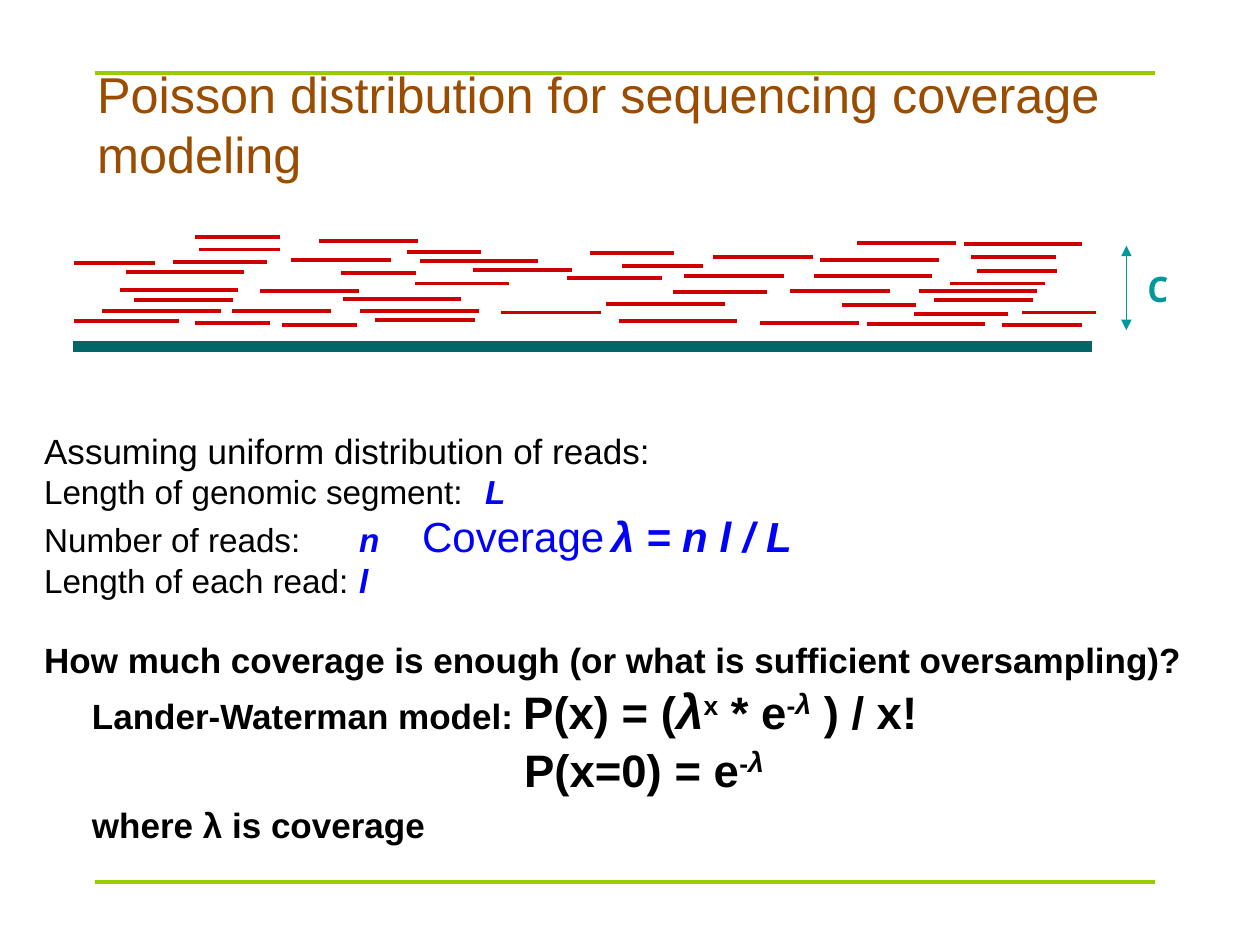
from pptx import Presentation
from pptx.dml.color import RGBColor
from pptx.enum.shapes import MSO_CONNECTOR
from pptx.enum.text import MSO_ANCHOR, MSO_AUTO_SIZE, PP_ALIGN
from pptx.oxml.ns import qn
from pptx.util import Inches, Pt
from lxml.etree import SubElement

COLORS = {"rule": "99CC00", "title": "9A4D00", "text": "000000", "symbol": "0000FF",
          "genome": "006666", "read": "CC0000", "depth": "009999"}

TITLE = "Poisson distribution for sequencing coverage modeling"

# Reads, grouped by length: (left, height on the slide)
READS = {
    0.59: [(1.55, 2.56), (2.24, 2.58), (6.68, 2.42), (2.71, 2.17), (3.23, 2), (8.11, 2.48)],
    0.64: [(1.58, 1.98), (7.95, 2.58), (4.94, 2.11), (7.75, 2.15), (0.59, 2.09)],
    0.67: [(1.55, 1.88), (4.68, 2.01), (7.71, 2.04)],
    0.75: [(1.37, 2.08), (3.29, 2.25), (5.34, 2.32), (7.25, 2.49), (4.5, 2.21), (7.54, 2.25)],
    0.79: [(1.06, 2.38), (1.84, 2.47), (2.06, 2.31), (2.98, 2.54), (3.98, 2.48),
           (2.31, 2.06), (2.53, 1.91), (3.75, 2.14), (6.03, 2.56), (6.27, 2.31),
           (7.41, 2.38), (5.43, 2.19), (5.66, 2.04), (6.8, 1.93)],
    0.83: [(0.59, 2.55)],
    0.94: [(0.95, 2.3), (1, 2.16), (0.81, 2.47), (2.86, 2.47), (2.72, 2.37), (3.33, 2.07),
           (4.91, 2.55), (4.81, 2.41), (6.88, 2.57), (7.29, 2.31), (6.46, 2.19),
           (6.51, 2.06), (7.65, 1.94)],
}

# Run styles
PLAIN = {"size": 19}
LEAD = {"size": 20}
SYMBOL = {"size": 19, "color": "symbol", "bold": True, "italic": True}
COVERAGE = {"size": 24, "color": "symbol"}
RATIO = {**SYMBOL, "size": 24}
STRONG = {"size": 20, "bold": True}
FORMULA = {"size": 26, "bold": True}
POWER = {**FORMULA, "raised": True}
LAMBDA = {"size": 28, "bold": True, "italic": True}
LAMBDA_POWER = {**LAMBDA, "raised": True}

# Body paragraphs: left indent, tab stops, extra space before, runs
BODY = [
    (0, [], 0, [("Assuming uniform distribution of reads:", LEAD)]),
    (0, [3.47], 0, [("Length of genomic segment:\t", PLAIN), ("L", SYMBOL)]),
    (0, [3.5, 4.32, 6.36], 0, [("Number of reads:\t", PLAIN), ("n\t", SYMBOL),
                               ("Coverage\t", COVERAGE), ("λ = n l / L", RATIO)]),
    (0, [3.52], 0, [("Length of each read:\t", PLAIN), ("l", SYMBOL)]),
    (0, [], 22, [("How much coverage is enough (or what is sufficient oversampling)?", STRONG)]),
    (0.38, [], 0, [("Lander-Waterman model: ", STRONG), ("P(x) = (", FORMULA), ("λ", LAMBDA),
                   ("x", POWER), (" * e", FORMULA), ("-", POWER), ("λ", LAMBDA_POWER),
                   (" ) / x!", FORMULA)]),
    (3.81, [], 0, [("P(x=0) = e", FORMULA), ("-", POWER), ("λ", LAMBDA_POWER)]),
    (0.38, [], 4, [("where λ is coverage", STRONG)]),
]


def place(shape, left, top, width, height):
    box = {"left": left, "top": top, "width": width, "height": height}
    for name, value in box.items():
        setattr(shape, name, Inches(value))


def add_line(slide, start, end, color, width, arrows=False):
    points = [Inches(value) for value in (*start, *end)]
    connector = slide.shapes.add_connector(MSO_CONNECTOR.STRAIGHT, *points)
    connector.line.color.rgb = RGBColor.from_string(COLORS[color])
    connector.line.width = Pt(width)
    properties = connector.line._get_or_add_ln()
    if arrows:
        for end_name in ("a:headEnd", "a:tailEnd"):
            SubElement(properties, qn(end_name), type="triangle")
    SubElement(properties.getparent(), qn("a:effectLst"))


def add_run(paragraph, text, size, color="text", bold=False, italic=False,
            raised=False, name="Arial"):
    run = paragraph.add_run()
    run.text = text
    formats = {"size": Pt(size), "bold": bold, "italic": italic, "name": name}
    for key, value in formats.items():
        setattr(run.font, key, value)
    run.font.color.rgb = RGBColor.from_string(COLORS[color])
    if raised:
        run.font._element.set("baseline", "30000")


def fill_body(frame):
    for index, (indent, stops, extra, runs) in enumerate(BODY):
        paragraph = frame.paragraphs[0] if index == 0 else frame.add_paragraph()
        largest = max(style["size"] for _, style in runs)
        paragraph.line_spacing = 0.8
        paragraph.space_before = Pt(round(0.23 * largest + extra, 1))
        properties = paragraph._p.get_or_add_pPr()
        properties.set("marL", str(Inches(indent)))
        properties.set("indent", "0")
        SubElement(properties, qn("a:buNone"))
        if stops:
            tabs = SubElement(properties, qn("a:tabLst"))
            for stop in stops:
                SubElement(tabs, qn("a:tab"), pos=str(Inches(stop)), algn="l")
        for text, style in runs:
            add_run(paragraph, text, **style)


def main():
    presentation = Presentation()
    presentation.slide_width, presentation.slide_height = Inches(10), Inches(7.5)
    slide = presentation.slides.add_slide(presentation.slide_layouts[1])

    # Title and body
    title, body = slide.placeholders
    place(title, 0.67, 0.63, 8.58, 0.7)
    place(body, 0.25, 3.42, 9.34, 3.67)
    for shape, anchor in ((title, MSO_ANCHOR.MIDDLE), (body, MSO_ANCHOR.TOP)):
        shape.text_frame.auto_size = MSO_AUTO_SIZE.NONE
        shape.text_frame.vertical_anchor = anchor
        shape.text_frame.word_wrap = True
    heading = title.text_frame.paragraphs[0]
    heading.alignment = PP_ALIGN.LEFT
    add_run(heading, TITLE, 28.8, "title")
    fill_body(body.text_frame)

    # Rules above and below
    for height in (0.58, 7):
        add_line(slide, (0.75, height), (9.17, height), "rule", 2.25)

    # Genome with its reads
    add_line(slide, (0.58, 2.75), (8.67, 2.75), "genome", 6)
    for length, starts in READS.items():
        for left, height in starts:
            add_line(slide, (left, height), (left + length, height), "read", 2.25)

    # Coverage depth
    add_line(slide, (8.94, 1.95), (8.94, 2.62), "depth", 1, arrows=True)
    label = slide.shapes.add_textbox(Inches(9.01), Inches(2.07), Inches(0.4), Inches(0.43))
    label.text_frame.word_wrap = False
    label.text_frame.auto_size = MSO_AUTO_SIZE.SHAPE_TO_FIT_TEXT
    add_run(label.text_frame.paragraphs[0], "C", 20, "depth", bold=True, name="Noto Sans Mono")

    presentation.save("out.pptx")


if __name__ == "__main__":
    main()
